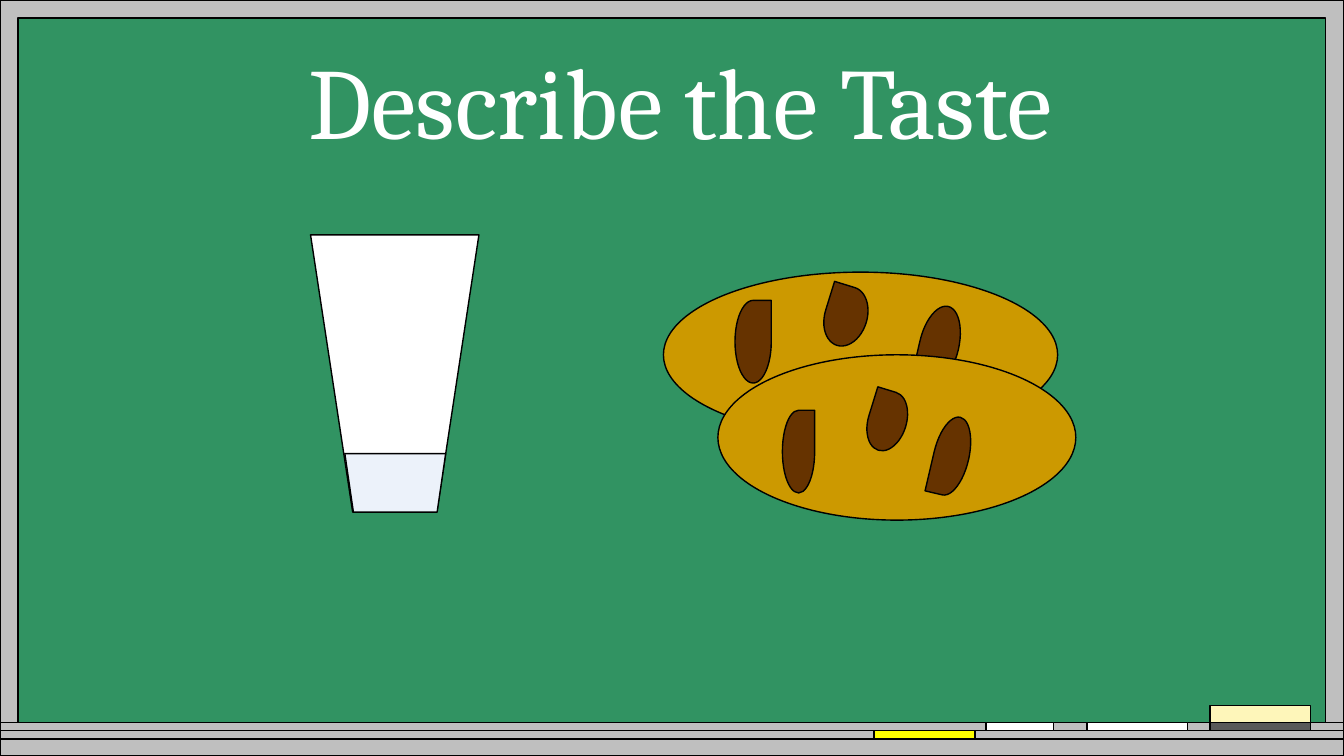
from pptx import Presentation
from pptx.dml.color import RGBColor
from pptx.enum.shapes import MSO_SHAPE
from pptx.enum.text import MSO_ANCHOR, MSO_AUTO_SIZE, PP_ALIGN
from pptx.util import Inches, Pt

GREEN = RGBColor(0x31, 0x93, 0x62)
GREY = RGBColor(0xBF, 0xBF, 0xBF)
DARK = RGBColor(0x59, 0x59, 0x59)
CREAM = RGBColor(0xFE, 0xF6, 0xBA)
YELLOW = RGBColor(0xFF, 0xFF, 0x00)
DOUGH = RGBColor(0xCC, 0x99, 0x00)
COCOA = RGBColor(0x66, 0x33, 0x00)
ICE = RGBColor(0xEC, 0xF2, 0xFA)
WHITE = RGBColor(0xFF, 0xFF, 0xFF)
BLACK = RGBColor(0x00, 0x00, 0x00)

WIDE, HIGH = 13.33, 7.5
STEP = 1 / 12  # height of one ledge strip
LEDGE = HIGH - 4 * STEP

deck = Presentation()
deck.slide_width = Inches(WIDE)
deck.slide_height = Inches(HIGH)
slide = deck.slides.add_slide(deck.slide_layouts[5])


def draw(group, kind, x, y, w, h, fill, turn=0, adjust=None):
    """Add a black-edged shape, with lengths in inches and turn in degrees."""
    shape = group.shapes.add_shape(kind, Inches(x), Inches(y), Inches(w), Inches(h))
    shape.shadow.inherit = False
    shape.fill.solid()
    shape.fill.fore_color.rgb = fill
    shape.line.color.rgb = BLACK
    shape.line.width = Pt(1)
    shape.rotation = turn
    if adjust is not None:
        shape.adjustments[0] = adjust


# Chalkboard, frame and ledge
board = slide.shapes.add_group_shape()
draw(board, MSO_SHAPE.RECTANGLE, 0, 0, WIDE, HIGH, GREEN)
draw(board, MSO_SHAPE.FRAME, 0, 0, WIDE, HIGH, GREY, adjust=0.024)
for row, rows in ((2, 2), (1, 1), (0, 1)):
    draw(board, MSO_SHAPE.RECTANGLE, 0, LEDGE + row * STEP, WIDE, rows * STEP, GREY)

# Eraser and chalk: left, ledge row, width, rows, colour
for x, row, w, rows, fill in (
    (12, -2, 1, 2, CREAM),
    (12, 0, 1, 1, DARK),
    (10.78, 0, 1, 1, WHITE),
    (9.78, 0, 0.67, 1, WHITE),
    (8.67, 1, 1, 1, YELLOW),
):
    draw(board, MSO_SHAPE.RECTANGLE, x, LEDGE + row * STEP, w, rows * STEP, fill)

# Cookies, back to front; each chip is placed from its cookie's corner
TURNS = (0, 287.1, 193.1)
plate = slide.shapes.add_group_shape()
for left, top, width, chips in (
    (6.58, 2.7, 3.91,
     ((0.71, 0.28, 0.36, 0.82), (1.51, 0.23, 0.6, 0.42), (2.54, 0.33, 0.39, 0.79))),
    (7.12, 3.52, 3.55,
     ((0.64, 0.55, 0.32, 0.82), (1.38, 0.47, 0.6, 0.38), (2.14, 0.61, 0.35, 0.79))),
):
    draw(plate, MSO_SHAPE.OVAL, left, top, width, 1.64, DOUGH)
    for (x, y, w, h), turn in zip(chips, TURNS):
        draw(plate, MSO_SHAPE.TEAR, left + x, top + y, w, h, COCOA, turn)

# Glass of milk
glass = slide.shapes.add_group_shape()
draw(glass, MSO_SHAPE.TRAPEZOID, 3.08, 2.33, 1.67, 2.75, WHITE, 180, 0.25)
draw(glass, MSO_SHAPE.TRAPEZOID, 3.42, 4.5, 1, 0.58, ICE, 180, 0.146)

# Title, brought in front of the board
title = slide.shapes.title
title.left, title.top = Inches(2.33), Inches(0.33)
title.width, title.height = Inches(8.83), Inches(1.31)
slide.shapes._spTree.append(title._element)
frame = title.text_frame
frame.word_wrap = True
frame.auto_size = MSO_AUTO_SIZE.NONE
frame.vertical_anchor = MSO_ANCHOR.TOP
line = frame.paragraphs[0]
line.alignment = PP_ALIGN.CENTER
run = line.add_run()
run.text = "Describe the Taste"
run.font.name = "Cambria"
run.font.size = Pt(72)
run.font.color.rgb = WHITE

deck.save("out.pptx")
